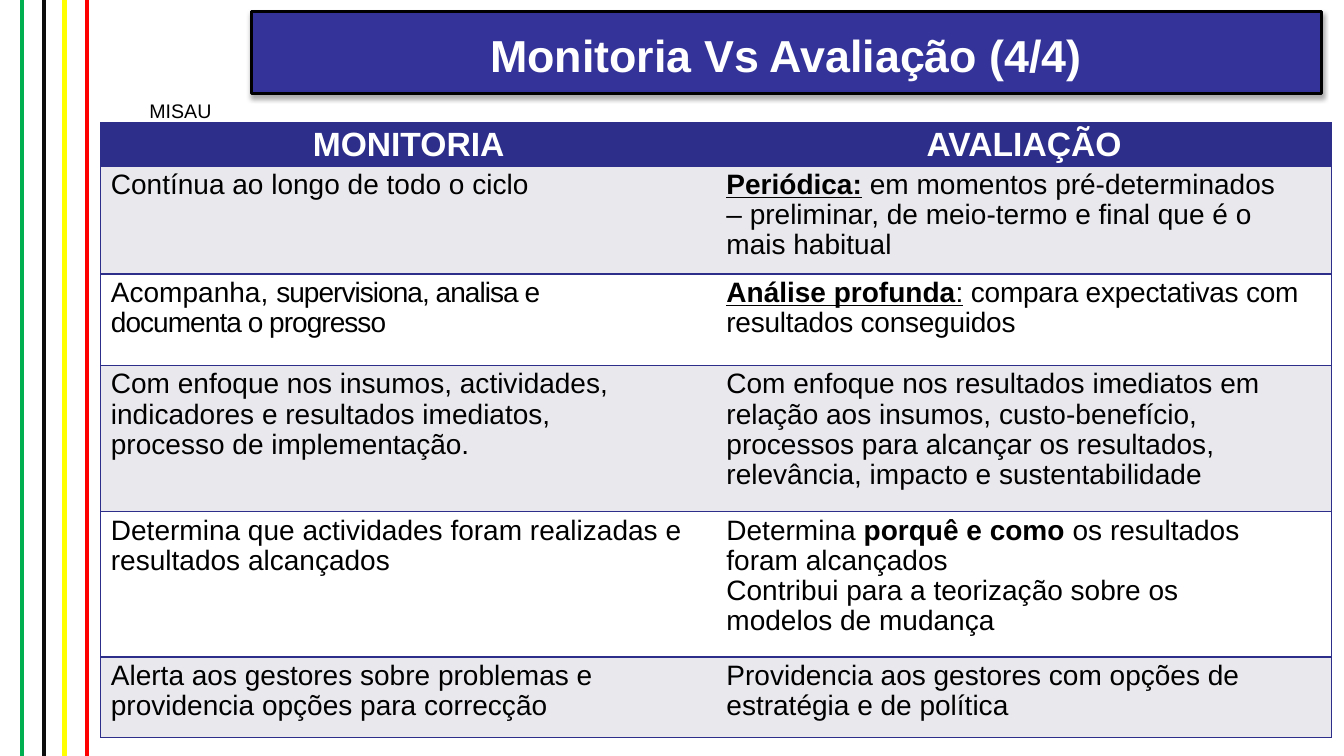
from dataclasses import dataclass

from pptx import Presentation
from pptx.dml.color import RGBColor
from pptx.enum.shapes import MSO_CONNECTOR, MSO_SHAPE
from pptx.enum.text import MSO_ANCHOR, PP_ALIGN
from pptx.oxml.ns import qn
from pptx.util import Inches, Pt
from lxml.etree import SubElement

LINE = MSO_CONNECTOR.STRAIGHT
RECT = MSO_SHAPE.RECTANGLE
MIDDLE = MSO_ANCHOR.MIDDLE
LEFT, CENTER = PP_ALIGN.LEFT, PP_ALIGN.CENTER

HUES = {
    "green": "00B050", "ink": "0D0D0D", "yellow": "FFFF00", "red": "FF0000",
    "title": "333399", "head": "2D2D8A", "band": "E8E8ED",
    "white": "FFFFFF", "black": "000000",
}
NO_GRID = "{2D5ABB26-0587-4C30-8999-92F81FD0307C}"
FONTS = {
    "title": {"size": Pt(32), "bold": True, "name": "Arial"},
    "label": {"size": Pt(14), "name": "Arial"},
    "head": {"size": Pt(24), "bold": True, "name": "Arial"},
    "body": {"size": Pt(20), "name": "Arial"},
}
STYLES = {
    "plain": {},
    "bold": {"bold": True},
    "key": {"bold": True, "underline": True},
    "under": {"underline": True},
}


@dataclass
class Stripe:
    x: float
    hue: str


@dataclass
class Span:
    text: str
    style: str = "plain"
    track: float = 0


@dataclass
class Entry:
    lines: list[list[Span]]
    right: float = 0.1


@dataclass
class Row:
    height: float
    fill: str
    cells: tuple[Entry, Entry]


def plain(*lines: str, right: float = 0.1) -> Entry:
    return Entry([[Span(line)] for line in lines], right)


STRIPES = [Stripe(0.22, "green"), Stripe(0.44, "ink"),
           Stripe(0.64, "yellow"), Stripe(0.86, "red")]

ROWS = [
    Row(0.42, "head", (plain("MONITORIA", right=0), plain("AVALIAÇÃO", right=0))),
    Row(1.07, "band", (
        plain("Contínua ao longo de todo o ciclo"),
        Entry([[Span("Periódica:", "key"),
                Span(" em momentos pré-determinados – preliminar, de meio-termo "
                     "e final que é o mais habitual")]], 0.4))),
    Row(0.91, "white", (
        Entry([[Span("Acompanha, "),
                Span("supervisiona, analisa e documenta o progresso",
                     track=-0.7)]], 0.8),
        Entry([[Span("Análise profunda", "key"), Span(":", "under"),
                Span(" compara expectativas com resultados conseguidos",
                     track=-0.2)]]))),
    Row(1.45, "band", (
        plain("Com enfoque nos insumos, actividades, indicadores e resultados "
              "imediatos, processo de implementação.", right=0.7),
        plain("Com enfoque nos resultados imediatos em relação aos insumos, "
              "custo-benefício, processos para alcançar os resultados, "
              "relevância, impacto e sustentabilidade", right=0.4))),
    Row(1.44, "white", (
        plain("Determina que actividades foram realizadas e resultados alcançados"),
        Entry([[Span("Determina "), Span("porquê e como ", "bold"),
                Span("os resultados foram alcançados")],
               [Span("Contribui para a teorização sobre os")],
               [Span("modelos de mudança")]], 0.4))),
    Row(0.8, "band", (
        plain("Alerta aos gestores sobre problemas e",
              "providencia opções para correcção"),
        plain("Providencia aos gestores com opções de estratégia e de política"))),
]


def rgb(hue: str) -> RGBColor:
    return RGBColor.from_string(HUES[hue])


def apply(thing: object, values: dict) -> None:
    for name, value in values.items():
        setattr(thing, name, value)


def paint(spot, hue: str) -> None:
    spot.fill.solid()
    spot.fill.fore_color.rgb = rgb(hue)


def write(para, span: Span, font: str, hue: str) -> None:
    run = para.add_run()
    run.text = span.text
    apply(run.font, FONTS[font] | STYLES[span.style])
    run.font.color.rgb = rgb(hue)
    if span.track:
        run.font._element.set("spc", str(round(span.track * 100)))


def draw_stripe(slide, stripe: Stripe) -> None:
    x = Inches(stripe.x)
    line = slide.shapes.add_connector(LINE, x, 0, x, Inches(7.5))
    line.line.color.rgb = rgb(stripe.hue)
    line.line.width = Pt(3)
    SubElement(line._element.spPr, qn("a:effectLst"))


def draw_title(slide) -> None:
    box = slide.shapes.add_shape(RECT, Inches(2.49), Inches(0.11),
                                 Inches(10.62), Inches(0.82))
    box.shadow.inherit = False
    paint(box, "title")
    box.line.color.rgb = rgb("black")
    box.line.width = Pt(2.25)
    list_ = box._element.spPr.find(qn("a:effectLst"))
    shade = SubElement(list_, qn("a:outerShdw"), blurRad=str(Pt(3.5)),
                       dist=str(Pt(2.2)), dir="5400000", rotWithShape="0")
    color = SubElement(shade, qn("a:srgbClr"), val=HUES["black"])
    SubElement(color, qn("a:alpha"), val="32000")
    frame = box.text_frame
    apply(frame, {"word_wrap": True, "vertical_anchor": MIDDLE,
                  "margin_top": Inches(0.16), "margin_bottom": Inches(0.12)})
    para = frame.paragraphs[0]
    para.alignment = CENTER
    write(para, Span("Monitoria Vs Avaliação (4/4)"), "title", "white")


def draw_label(slide) -> None:
    box = slide.shapes.add_textbox(Inches(1.07), Inches(0.93),
                                   Inches(1.44), Inches(0.34))
    box.text_frame.word_wrap = True
    para = box.text_frame.paragraphs[0]
    para.alignment = CENTER
    write(para, Span("MISAU"), "label", "black")


def edge(cell, sides: str) -> None:
    for side in sides:
        line = SubElement(cell._tc.get_or_add_tcPr(), qn(f"a:ln{side}"),
                          w=str(Pt(1)))
        fill = SubElement(line, qn("a:solidFill"))
        SubElement(fill, qn("a:srgbClr"), val=HUES["head"])


def fill_cell(cell, entry: Entry, row: Row, sides: str) -> None:
    head = row.fill == "head"
    edge(cell, sides)
    paint(cell, row.fill)
    apply(cell, {"margin_left": Inches(0 if head else 0.1),
                 "margin_right": Inches(entry.right),
                 "margin_top": Inches(0.04), "margin_bottom": 0})
    frame = cell.text_frame
    for i, line in enumerate(entry.lines):
        para = frame.add_paragraph() if i else frame.paragraphs[0]
        apply(para, {"alignment": CENTER if head else LEFT,
                     "line_spacing": 0.97,
                     "space_before": Pt(0 if i else 2.7)})
        for span in line:
            write(para, span, "head" if head else "body",
                  "white" if head else "black")


def draw_table(slide) -> None:
    table = slide.shapes.add_table(len(ROWS), 2, Inches(1), Inches(1.22),
                                   Inches(12.21), Inches(6.1)).table
    apply(table, {"first_row": False, "horz_banding": False})
    table._tbl.tblPr.find(qn("a:tableStyleId")).text = NO_GRID
    for r, row in enumerate(ROWS):
        table.rows[r].height = Inches(row.height)
        for c, (entry, sides) in enumerate(zip(row.cells, ("LTB", "RTB"))):
            fill_cell(table.cell(r, c), entry, row, sides)


def main() -> None:
    deck = Presentation()
    apply(deck, {"slide_width": Inches(13.33), "slide_height": Inches(7.5)})
    slide = deck.slides.add_slide(deck.slide_layouts[6])
    for stripe in STRIPES:
        draw_stripe(slide, stripe)
    draw_label(slide)
    draw_title(slide)
    draw_table(slide)
    deck.save("out.pptx")


if __name__ == "__main__":
    main()
